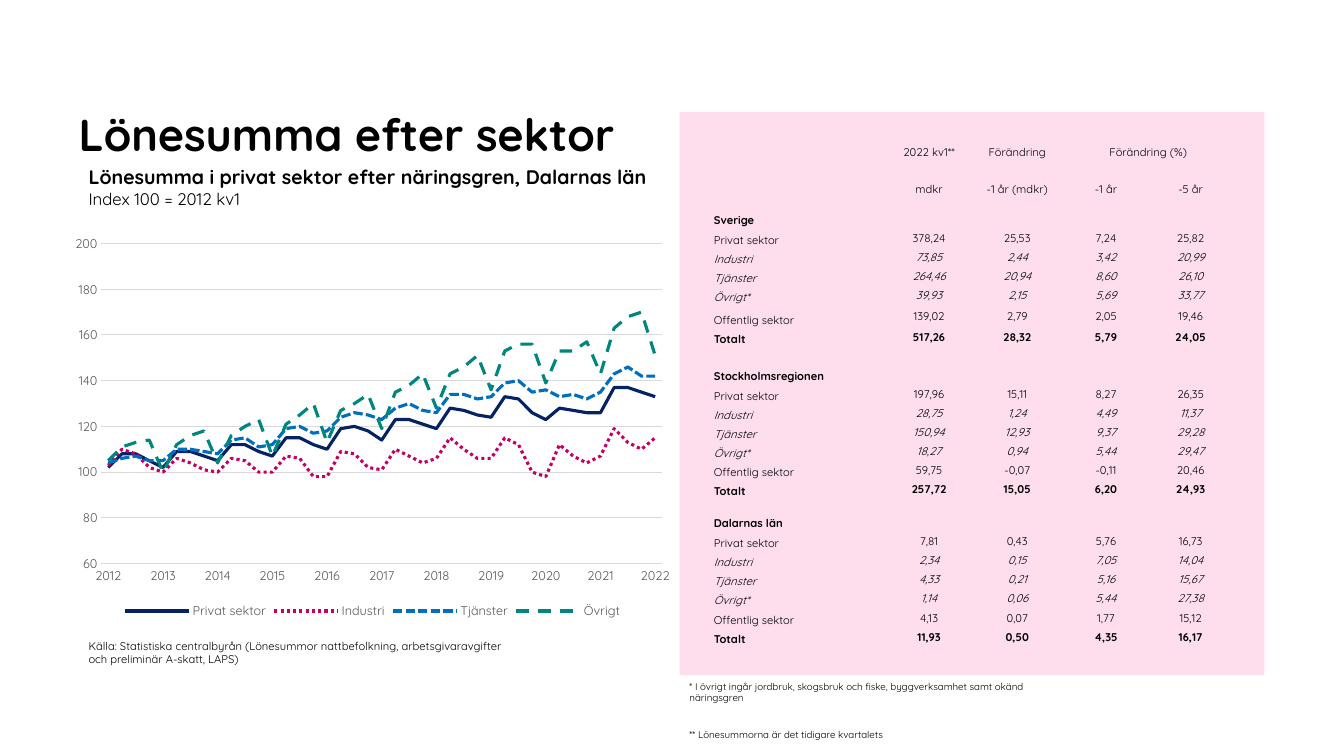
"""Build the slide on total wages by sector."""
from lxml import etree
from pptx import Presentation
from pptx.chart.data import CategoryChartData
from pptx.dml.color import RGBColor
from pptx.enum.chart import XL_CHART_TYPE, XL_LEGEND_POSITION, XL_TICK_MARK
from pptx.enum.dml import MSO_LINE
from pptx.enum.shapes import MSO_SHAPE
from pptx.enum.text import MSO_ANCHOR, PP_ALIGN
from pptx.util import Inches, Pt

LINE_CHART = XL_CHART_TYPE.LINE
LEGEND_BOTTOM = XL_LEGEND_POSITION.BOTTOM
NO_TICKS = XL_TICK_MARK.NONE
RECTANGLE = MSO_SHAPE.RECTANGLE
BOTTOM, MIDDLE = MSO_ANCHOR.BOTTOM, MSO_ANCHOR.MIDDLE
LEFT, CENTER = PP_ALIGN.LEFT, PP_ALIGN.CENTER
SOLID, DOTTED = MSO_LINE.SOLID, MSO_LINE.ROUND_DOT
SHORT_DASH, LONG_DASH = MSO_LINE.SQUARE_DOT, MSO_LINE.DASH

WIDTH, HEIGHT = Inches(13.33), Inches(7.5)
FONT = "Quicksand"
PLAIN_TABLE_STYLE = "{2D5ABB26-0587-4C30-8999-92F81FD0307C}"
COLORS = {
    "text": "000000", "panel": "FEDEED", "axis": "595959", "grid": "D9D9D9",
    "Privat sektor": "052364", "Industri": "C40064",
    "Tjänster": "006EBF", "Övrigt": "00867F",
}
SERIES = {
    "Privat sektor": (SOLID, [
        102, 108, 108, 105, 102, 109, 109, 107, 105, 112, 112, 109, 107, 115,
        115, 112, 110, 119, 120, 118, 114, 123, 123, 121, 119, 128, 127, 125,
        124, 133, 132, 126, 123, 128, 127, 126, 126, 137, 137, 135, 133]),
    "Industri": (DOTTED, [
        103, 110, 108, 102, 100, 106, 104, 101, 100, 106, 105, 100, 100, 107,
        106, 98, 98, 109, 108, 102, 101, 110, 107, 104, 106, 115, 110, 106,
        106, 115, 112, 100, 98, 112, 107, 104, 107, 119, 113, 110, 115]),
    "Tjänster": (SHORT_DASH, [
        104, 106, 107, 105, 105, 110, 110, 109, 108, 114, 115, 111, 112, 119,
        120, 117, 118, 124, 126, 125, 123, 128, 130, 127, 126, 134, 134, 132,
        133, 139, 140, 135, 136, 133, 134, 132, 135, 143, 146, 142, 142]),
    "Övrigt": (LONG_DASH, [
        105, 111, 113, 114, 100, 112, 116, 118, 104, 116, 120, 123, 107, 121,
        125, 130, 113, 127, 130, 134, 119, 135, 138, 143, 128, 143, 146, 151,
        136, 153, 156, 156, 139, 153, 153, 157, 143, 163, 168, 170, 151]),
}
SECTORS = ["Privat sektor", "Industri", "Tjänster", "Övrigt*", "Offentlig sektor", "Totalt"]
ITALIC_SECTORS = SECTORS[1:4]
HEADERS = [["", "2022 kv1**", "Förändring", "Förändring (%)", ""],
           ["", "mdkr", "-1 år (mdkr)", "-1 år", "-5 år"]]
REGIONS = {
    "Sverige": ["378,24 25,53 7,24 25,82", "73,85 2,44 3,42 20,99",
                "264,46 20,94 8,60 26,10", "39,93 2,15 5,69 33,77",
                "139,02 2,79 2,05 19,46", "517,26 28,32 5,79 24,05"],
    "Stockholmsregionen": ["197,96 15,11 8,27 26,35", "28,75 1,24 4,49 11,37",
                           "150,94 12,93 9,37 29,28", "18,27 0,94 5,44 29,47",
                           "59,75 -0,07 -0,11 20,46", "257,72 15,05 6,20 24,93"],
    "Dalarnas län": ["7,81 0,43 5,76 16,73", "2,34 0,15 7,05 14,04",
                     "4,33 0,21 5,16 15,67", "1,14 0,06 5,44 27,38",
                     "4,13 0,07 1,77 15,12", "11,93 0,50 4,35 16,17"],
}
COLUMN_WIDTHS = [1.73, 0.83, 0.92, 0.84, 0.84]
ROW_HEIGHT = 0.19
SPECIAL_HEIGHTS = {0: 0.37, 1: 0.37, 2: 0.31, 7: 0.23, 9: 0.37, 16: 0.32, 21: 0.2}


def area(left, top, width, height):
    """Turn percentages of the slide into left, top, width and height."""
    return [round(share * side / 100) for share, side in
            zip((left, top, width, height), (WIDTH, HEIGHT, WIDTH, HEIGHT))]


def style_font(font, size, color="text", bold=False, italic=False):
    """Set the look of a font."""
    font.name, font.size, font.bold, font.italic = FONT, Pt(size), bold, italic
    font.color.rgb = RGBColor.from_string(COLORS[color])


def add_run(paragraph, text, **font_format):
    """Append a formatted run."""
    run = paragraph.add_run()
    run.text = text
    style_font(run.font, **font_format)


def add_text(slide, text, box, size, wrap=True, bold=False):
    """Add a text box and return its paragraph."""
    frame = slide.shapes.add_textbox(*area(*box)).text_frame
    frame.word_wrap = wrap
    add_run(frame.paragraphs[0], text, size=size, bold=bold)
    return frame.paragraphs[0]


def add_title(slide, text, box):
    """Fill and place the title placeholder."""
    title = slide.shapes.title
    title.left, title.top, title.width, title.height = area(*box)
    frame = title.text_frame
    frame.margin_left = frame.margin_right = frame.margin_top = frame.margin_bottom = 0
    frame.vertical_anchor = BOTTOM
    frame.paragraphs[0].alignment = LEFT
    add_run(frame.paragraphs[0], text, size=32, bold=True)


def add_panel(slide, box):
    """Add the coloured panel behind the table."""
    panel = slide.shapes.add_shape(RECTANGLE, *area(*box))
    panel.shadow.inherit = False
    panel.fill.solid()
    panel.fill.fore_color.rgb = RGBColor.from_string(COLORS["panel"])
    panel.line.fill.background()


def fill_cell(cell, text, alignment=CENTER, anchor=BOTTOM, **font_format):
    """Write one table cell."""
    cell.fill.background()
    cell.margin_left = cell.margin_right = cell.margin_top = Inches(0.01)
    cell.margin_bottom = 0
    cell.vertical_anchor = anchor
    if text:
        paragraph = cell.text_frame.paragraphs[0]
        paragraph.alignment = alignment
        add_run(paragraph, text, size=8, **font_format)


def add_wage_table(slide, box):
    """Add the table of wages by region and sector."""
    rows = [(cells, {}) for cells in HEADERS]
    for region, values in REGIONS.items():
        rows.append(([region, "", "", "", ""], {"bold": True}))
        for sector, numbers in zip(SECTORS, values):
            rows.append(([sector, *numbers.split()],
                         {"bold": sector == "Totalt", "italic": sector in ITALIC_SECTORS}))
    table = slide.shapes.add_table(len(rows), len(COLUMN_WIDTHS), *area(*box)).table
    table.first_row = table.horz_banding = False
    table._tbl.tblPr[0].text = PLAIN_TABLE_STYLE
    for column, width in zip(table.columns, COLUMN_WIDTHS):
        column.width = Inches(width)
    for row_index, (cells, font_format) in enumerate(rows):
        table.rows[row_index].height = Inches(SPECIAL_HEIGHTS.get(row_index, ROW_HEIGHT))
        for column_index, text in enumerate(cells):
            is_value = row_index >= len(HEADERS) and column_index > 0
            fill_cell(table.cell(row_index, column_index), text,
                      alignment=CENTER if column_index else LEFT,
                      anchor=MIDDLE if is_value else BOTTOM, **font_format)
    table.cell(0, 3).merge(table.cell(0, 4))


def style_line(line, color, width, dash=SOLID):
    """Set the colour, width and dash of a line."""
    line.color.rgb = RGBColor.from_string(COLORS[color])
    line.width = Pt(width)
    line.dash_style = dash


def set_plot_layout(chart, **shares):
    """Fix the inner plot area as shares of the chart."""
    plot_area = chart._chartSpace.chart.plotArea
    namespace = "{" + plot_area.nsmap["c"] + "}"
    for old_layout in plot_area.findall(namespace + "layout"):
        plot_area.remove(old_layout)
    layout = etree.Element(namespace + "layout")
    manual = etree.SubElement(layout, namespace + "manualLayout")
    settings = {"layoutTarget": "inner", "xMode": "edge", "yMode": "edge", **shares}
    for name, value in settings.items():
        etree.SubElement(manual, namespace + name, val=str(value))
    plot_area.insert(0, layout)


def add_wage_chart(slide, box):
    """Add the line chart of wage indices."""
    data = CategoryChartData()
    data.categories = [str(2012 + quarter // 4) if quarter % 4 == 0 else ""
                       for quarter in range(41)]
    for name, (_, values) in SERIES.items():
        data.add_series(name, values)
    chart = slide.shapes.add_chart(LINE_CHART, *area(*box), data).chart
    style_font(chart.font, 10)
    chart.has_title = False
    chart.has_legend = True
    chart.legend.position = LEGEND_BOTTOM
    chart.legend.include_in_layout = False
    style_font(chart.legend.font, 9, "axis")
    for axis in (chart.category_axis, chart.value_axis):
        axis.major_tick_mark = axis.minor_tick_mark = NO_TICKS
        style_font(axis.tick_labels.font, 9, "axis")
    style_line(chart.category_axis.format.line, "grid", 0.75)
    value_axis = chart.value_axis
    value_axis.format.line.fill.background()
    value_axis.minimum_scale, value_axis.maximum_scale, value_axis.major_unit = 60, 200, 20
    style_line(value_axis.major_gridlines.format.line, "grid", 0.75)
    chart.plots[0].vary_by_categories = False
    for series in chart.plots[0].series:
        series.smooth = False
        style_line(series.format.line, series.name, 2.25, SERIES[series.name][0])
    set_plot_layout(chart, x=0.06, y=0.04, w=0.91, h=0.81)


def main():
    """Build and save the slide."""
    presentation = Presentation()
    presentation.slide_width, presentation.slide_height = WIDTH, HEIGHT
    slide = presentation.slides.add_slide(presentation.slide_layouts[5])
    add_title(slide, "Lönesumma efter sektor", (5.85, 4.93, 69.17, 16.27))
    add_text(slide, "Källa: Statistiska centralbyrån (Lönesummor nattbefolkning, "
             "arbetsgivaravgifter och preliminär A-skatt, LAPS)",
             (5.85, 83.87, 33.08, 4.93), 8)
    add_panel(slide, (50.56, 14.8, 43.51, 74.53))
    heading = add_text(slide, "Lönesumma i privat sektor efter näringsgren, Dalarnas län",
                       (5.85, 21.2, 43.51, 7.2), 14, bold=True)
    heading.add_line_break()
    add_run(heading, "Index 100 = 2012 kv1", size=12)
    add_wage_table(slide, (53.04, 16.13, 38.78, 70))
    add_text(slide, "* I övrigt ingår jordbruk, skogsbruk och fiske, byggverksamhet "
             "samt okänd näringsgren", (50.56, 89.33, 29.26, 2.93), 7)
    add_wage_chart(slide, (4.8, 30.13, 45.84, 52.27))
    add_text(slide, "** Lönesummorna är det tidigare kvartalets",
             (50.56, 95.73, 16.8, 2.93), 7, wrap=False)
    presentation.save("out.pptx")


if __name__ == "__main__":
    main()
